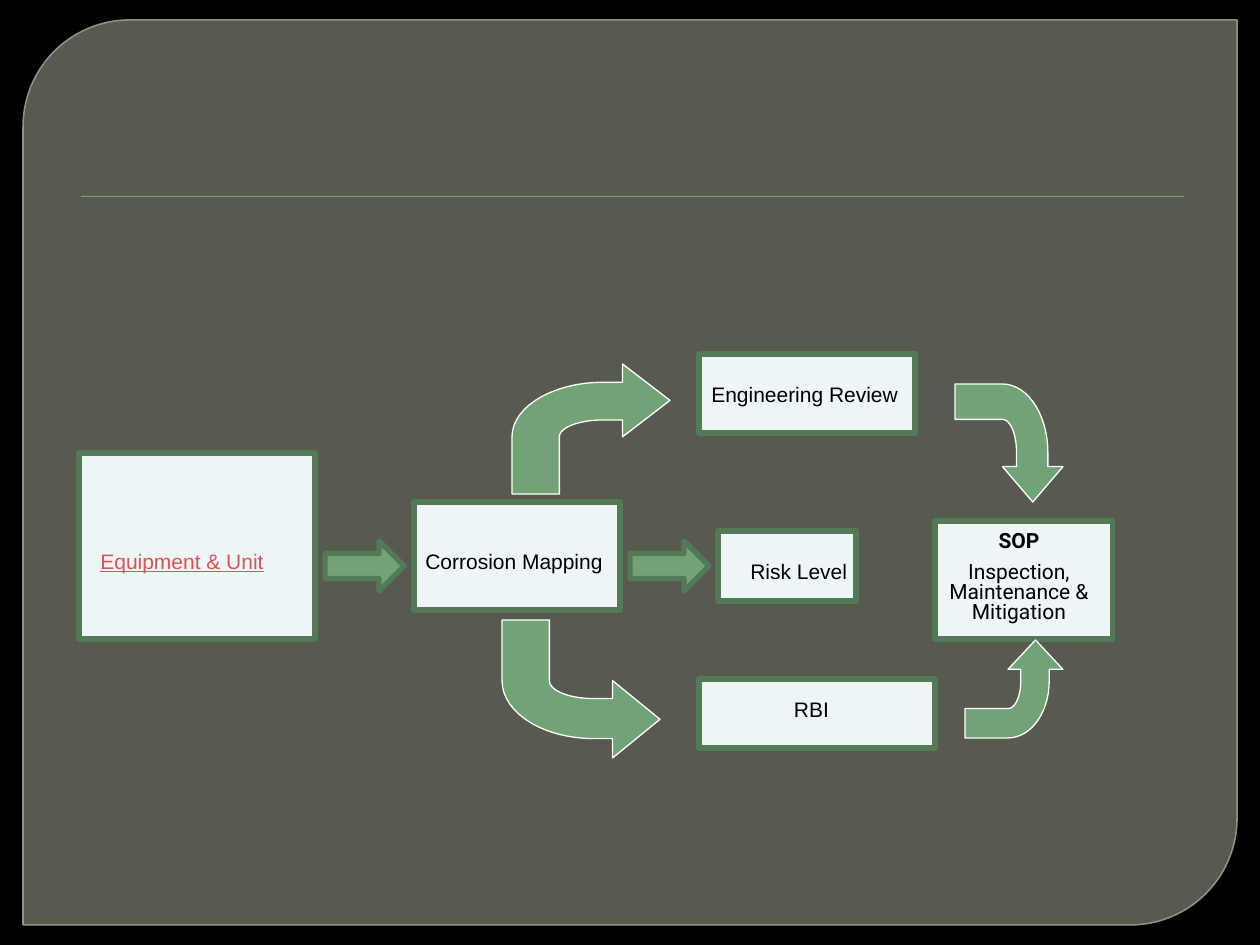
import math

import lxml.etree
import pptx
import pptx.dml.color
import pptx.enum.shapes
import pptx.enum.text
import pptx.oxml.ns
import pptx.util

PX = 914400 / 126
KIND = pptx.enum.shapes.MSO_SHAPE
ALIGN = pptx.enum.text.PP_ALIGN
COLS = {
    "back": "000000", "panel": "888B7B", "rim": "9DA090", "green": "72A376",
    "edge": "547957", "box": "EEF5F7", "text": "000000", "link": "DB5353",
    "white": "FFFFFF",
}


def paint(fmt, name, alpha=None):
    """Give a fill a solid colour, with opacity in percent if asked."""
    fmt.solid()
    fmt.fore_color.rgb = pptx.dml.color.RGBColor.from_string(COLS[name])
    if alpha:
        tag = pptx.oxml.ns.qn("a:alpha")
        node = fmt._xPr.find(".//" + pptx.oxml.ns.qn("a:srgbClr"))
        lxml.etree.SubElement(node, tag).set("val", str(alpha * 1000))


def style(shape, fill, line=None, width=3):
    shape.shadow.inherit = False
    paint(shape.fill, fill)
    if line:
        paint(shape.line.fill, line)
        shape.line.width = pptx.util.Pt(width)
    else:
        shape.line.fill.background()


prs = pptx.Presentation()
prs.slide_width = round(1260 * PX)
prs.slide_height = round(945 * PX)
slide = prs.slides.add_slide(prs.slide_layouts[6])
shapes = slide.shapes
paint(slide.background.fill, "back")

# Framed panel and title rule
panel = shapes.add_shape(KIND.ROUND_2_DIAG_RECTANGLE,
                         *[round(n * PX) for n in (23, 20, 1214, 905)])
panel.adjustments[0] = 0.118
panel.adjustments[1] = 0
style(panel, "panel", "rim", 0.87)
paint(panel.fill, "panel", 65)
paint(panel.line.fill, "rim", 88)
rule = shapes.add_shape(KIND.RECTANGLE,
                        *[round(n * PX) for n in (81, 196, 1103, 1)])
style(rule, "green")

# Boxes and straight arrows
blocks = [
    (KIND.RECTANGLE, "box", (79, 453, 236, 186)),
    (KIND.RIGHT_ARROW, "green", (325, 541, 79, 50)),
    (KIND.RIGHT_ARROW, "green", (630, 541, 79, 50)),
    (KIND.RECTANGLE, "box", (414, 502, 206, 108)),
    (KIND.RECTANGLE, "box", (699, 354, 216, 79)),
    (KIND.RECTANGLE, "box", (718, 531, 138, 70)),
    (KIND.RECTANGLE, "box", (699, 679, 236, 69)),
    (KIND.RECTANGLE, "box", (935, 521, 178, 118)),
]
for kind, fill, spot in blocks:
    style(shapes.add_shape(kind, *[round(n * PX) for n in spot]), fill, "edge")

# Labels: place, alignment, then lines of (words, font, bold, spacing)
labels = [
    ((88, 542, 246, 38), ALIGN.LEFT, [("Equipment & Unit", "Arial", False, None)]),
    ((413, 542, 227, 38), ALIGN.LEFT, [("Corrosion Mapping", "Arial", False, None)]),
    ((699, 375, 227, 38), ALIGN.LEFT, [("Engineering Review", "Arial", False, None)]),
    ((738, 552, 137, 39), ALIGN.LEFT, [("Risk Level", "Arial", False, None)]),
    ((738, 690, 147, 38), ALIGN.CENTER, [("RBI", "Arial", False, None)]),
    ((935, 521, 168, 112), ALIGN.CENTER, [
        ("SOP", "Roboto", True, None),
        ("Inspection, Maintenance & Mitigation", "Roboto", False, 0.8)]),
]
for spot, align, lines in labels:
    frame = shapes.add_textbox(*[round(n * PX) for n in spot]).text_frame
    frame.word_wrap = True
    for i, (words, face, bold, space) in enumerate(lines):
        para = frame.add_paragraph() if i else frame.paragraphs[0]
        para.alignment = align
        if space:
            para.line_spacing = space
        if face == "Roboto":
            para.space_before = pptx.util.Pt(6)
        run = para.add_run()
        run.text = words
        run.font.name = face
        run.font.size = pptx.util.Pt(12)
        run.font.bold = bold
        link = words.startswith("Equipment")
        run.font.underline = link
        paint(run.font.fill, "link" if link else "text")

# One bent arrow in unit space: u runs towards the tip, v back along the tail
turns = [math.radians(a) for a in range(0, 91, 6)]
outer = [(0.58 - 0.58 * math.sin(t), 0.56 - 0.42 * math.cos(t)) for t in turns]
inner = [(0.58 - 0.28 * math.cos(t), 0.56 - 0.13 * math.sin(t)) for t in turns]
bent = [(1, 0.28), (0.7, 0), (0.7, 0.14), *outer, (0, 1), (0.3, 1),
        *inner, (0.7, 0.43), (0.7, 0.56)]

# Origin, u axis and v axis of each bent arrow
bends = [
    ((1063, 738), (0, -98), (-98, 0)),
    ((502, 758), (158, 0), (0, -138)),
    ((512, 364), (158, 0), (0, 130)),
    ((1063, 384), (0, 118), (-108, 0)),
]
for (x, y), (ux, uy), (vx, vy) in bends:
    dots = [(round((x + u * ux + v * vx) * PX), round((y + u * uy + v * vy) * PX))
            for u, v in bent]
    path = shapes.build_freeform(*dots[0])
    path.add_line_segments(dots[1:], close=True)
    style(path.convert_to_shape(), "green", "white", 0.75)

prs.save("out.pptx")
